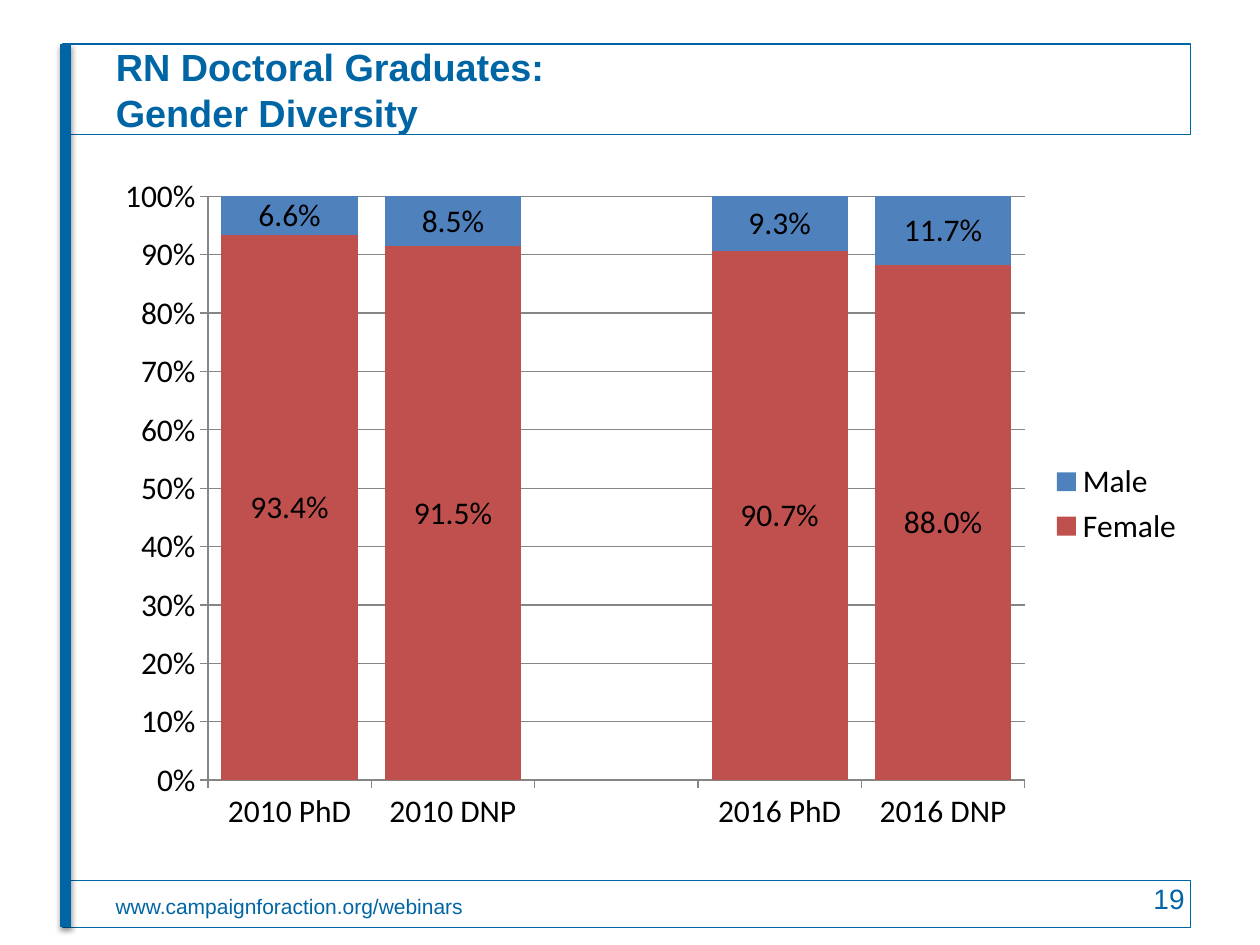
from lxml import etree
from pptx import Presentation
from pptx import util as u
from pptx.chart.data import CategoryChartData
from pptx.dml.color import RGBColor
from pptx.enum import chart as ch, shapes, text
from pptx.oxml.ns import qn

BLUE, GRID = "0065A4", "868686"


def rgb(value):
    return RGBColor.from_string(value)


def set_font(font, color, **values):
    for name, value in values.items():
        setattr(font, name, value)
    font.color.rgb = rgb(color)


def set_line(line, color, width):
    line.color.rgb = rgb(color)
    line.width = u.Pt(width)


class SlideStyle:
    font = "Arial"
    chart_font = "Calibri"

    def __init__(self, prs):
        self.slide = prs.slides.add_slide(prs.slide_layouts[5])

    def frame(self, *box):
        band = self.slide.shapes.add_shape(
            shapes.MSO_SHAPE.RECTANGLE, *map(u.Cm, box))
        band.shadow.inherit = False
        band.fill.solid()
        band.fill.fore_color.rgb = rgb("FFFFFF")
        set_line(band.line, BLUE, 0.75)

    def side_bar(self, x, top, bottom):
        bar = self.slide.shapes.add_connector(
            shapes.MSO_CONNECTOR.STRAIGHT, *map(u.Cm, (x, top, x, bottom)))
        set_line(bar.line, BLUE, 6)
        effects = etree.SubElement(bar._element.spPr, qn("a:effectLst"))
        shadow = etree.SubElement(
            effects, qn("a:outerShdw"), blurRad=str(u.Pt(3.1)),
            dist=str(u.Pt(1.6)), dir="5400000", rotWithShape="0")
        black = etree.SubElement(shadow, qn("a:srgbClr"), val="000000")
        etree.SubElement(black, qn("a:alpha"), val="38000")

    def put_text(self, shape, words, size, bold=False,
                 align=text.PP_ALIGN.LEFT, anchor=text.MSO_ANCHOR.TOP):
        frame = shape.text_frame
        frame.text = words
        layout = {"word_wrap": True, "auto_size": text.MSO_AUTO_SIZE.NONE,
                  "vertical_anchor": anchor}
        for name, value in layout.items():
            setattr(frame, name, value)
        paragraph = frame.paragraphs[0]
        paragraph.alignment = align
        for run in paragraph.runs:
            set_font(run.font, BLUE, name=self.font, size=u.Pt(size), bold=bold)

    def title(self, words, left, top, width, height):
        heading = self.slide.shapes.title
        heading.left, heading.top = u.Cm(left), u.Cm(top)
        heading.width, heading.height = u.Cm(width), u.Cm(height)
        self.put_text(heading, words, 21.6, bold=True,
                      anchor=text.MSO_ANCHOR.MIDDLE)
        # Bring the heading in front of the frames
        self.slide.shapes._spTree.append(heading._element)

    def label(self, words, size, *box, **style):
        self.put_text(self.slide.shapes.add_textbox(*map(u.Cm, box)),
                      words, size, **style)

    def stacked_chart(self, categories, series, *box):
        data = CategoryChartData(number_format="0.0%")
        data.categories = categories
        for name, values, _ in series:
            data.add_series(name, values)
        chart = self.slide.shapes.add_chart(
            ch.XL_CHART_TYPE.COLUMN_STACKED_100, *map(u.Cm, box), data).chart
        set_font(chart.font, "000000", name=self.chart_font, size=u.Pt(18))
        chart.has_title = False

        # Legend
        chart.has_legend = True
        chart.legend.position = ch.XL_LEGEND_POSITION.RIGHT
        chart.legend.include_in_layout = False

        # Axes
        share = chart.value_axis
        scale = {"minimum_scale": 0, "maximum_scale": 1, "major_unit": 0.1,
                 "has_major_gridlines": True}
        for name, value in scale.items():
            setattr(share, name, value)
        share.tick_labels.number_format = "0%"
        share.tick_labels.number_format_is_linked = False
        set_line(share.major_gridlines.format.line, GRID, 0.75)
        for axis in (share, chart.category_axis):
            axis.major_tick_mark = ch.XL_TICK_MARK.OUTSIDE
            set_line(axis.format.line, GRID, 0.75)

        # Columns and their labels
        plot = chart.plots[0]
        plot_format = {"gap_width": 20, "overlap": 100,
                       "vary_by_categories": False, "has_data_labels": True}
        for name, value in plot_format.items():
            setattr(plot, name, value)
        label_format = {"show_value": True, "number_format": "0.0%",
                        "number_format_is_linked": False,
                        "position": ch.XL_LABEL_POSITION.CENTER}
        for name, value in label_format.items():
            setattr(plot.data_labels, name, value)
        for columns, (_, _, color) in zip(plot.series, series):
            columns.format.fill.solid()
            columns.format.fill.fore_color.rgb = rgb(color)


def main():
    prs = Presentation()
    prs.slide_width, prs.slide_height = u.Cm(25.4), u.Cm(19.05)
    page = SlideStyle(prs)

    # Frames and side bar
    page.frame(1.27, 17.75, 22.73, 0.95)
    page.frame(1.27, 0.89, 22.73, 1.83)
    page.side_bar(1.32, 0.89, 18.69)

    # Heading
    page.title("RN Doctoral Graduates: \vGender Diversity",
               2.08, 0.89, 22.05, 1.83)

    # Graduates by gender
    page.stacked_chart(
        ["2010 PhD", "2010 DNP", "", "2016 PhD", "2016 DNP"],
        [("Female", (0.934, 0.915, None, 0.907, 0.88), "C0504D"),
         ("Male", (0.066, 0.085, None, 0.093, 0.117), "4F81BD")],
        2.08, 3.3, 22.05, 13.72)

    # Footer
    page.label("www.campaignforaction.org/webinars", 12,
               2.08, 17.88, 21.74, 0.76)
    page.label("19", 16, 18.21, 17.65, 5.92, 1.02,
               align=text.PP_ALIGN.RIGHT)

    prs.save("out.pptx")


if __name__ == "__main__":
    main()
